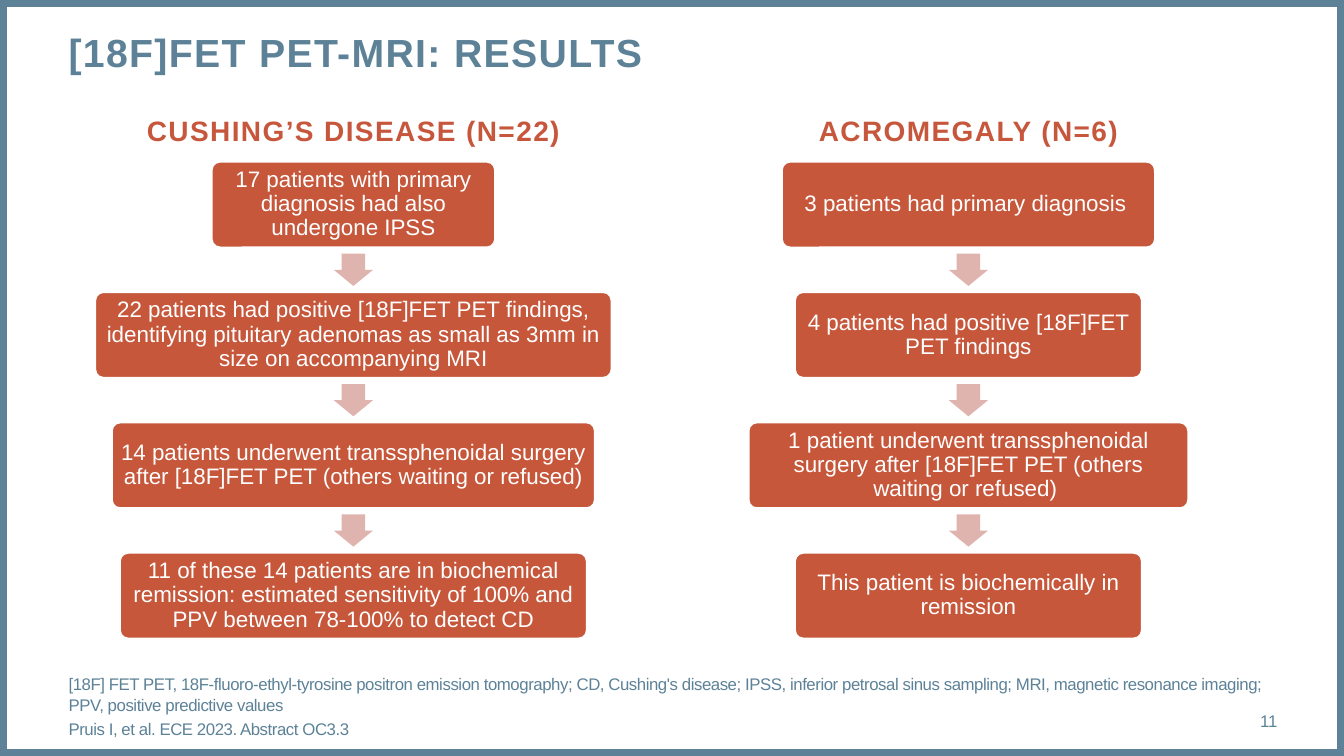
from pptx import Presentation
from pptx.dml.color import RGBColor
from pptx.enum.shapes import MSO_SHAPE
from pptx.enum.text import MSO_ANCHOR, PP_ALIGN
from pptx.util import Inches, Pt

RECTANGLE = MSO_SHAPE.RECTANGLE
ROUNDED = MSO_SHAPE.ROUNDED_RECTANGLE
DOWN_ARROW = MSO_SHAPE.DOWN_ARROW
LEFT, CENTER, RIGHT = PP_ALIGN.LEFT, PP_ALIGN.CENTER, PP_ALIGN.RIGHT
TOP, MIDDLE, BOTTOM = MSO_ANCHOR.TOP, MSO_ANCHOR.MIDDLE, MSO_ANCHOR.BOTTOM

BLUE = RGBColor(0x5D, 0x82, 0x98)
HEADING_RED = RGBColor(0xC7, 0x57, 0x3C)
STEP_RED = RGBColor(0xC6, 0x57, 0x3B)
ARROW_PINK = RGBColor(0xDF, 0xB4, 0xAF)
WHITE = RGBColor(0xFF, 0xFF, 0xFF)

PAGE_WIDTH, PAGE_HEIGHT = 13.33, 7.5
STEP_HEIGHT = 0.86
ARROW_WIDTH, ARROW_HEIGHT = 0.39, 0.32

CUSHING_STEPS = [
    (2.82, "17 patients with primary diagnosis had also undergone IPSS"),
    (5.13, "22 patients had positive [18F]FET PET findings, identifying pituitary "
           "adenomas as small as 3mm in size on accompanying MRI"),
    (4.8, "14 patients underwent transsphenoidal surgery after [18F]FET PET "
          "(others waiting or refused) "),
    (4.64, "11 of these 14 patients are in biochemical remission: estimated "
           "sensitivity of 100% and PPV between 78-100% to detect CD"),
]
ACROMEGALY_STEPS = [
    (3.71, "3 patients had primary diagnosis "),
    (3.45, "4 patients had positive [18F]FET PET findings"),
    (4.37, "1 patient underwent transsphenoidal surgery after [18F]FET PET "
           "(others waiting or refused) "),
    (3.45, "This patient is biochemically in remission"),
]
FOOTNOTES = [
    "[18F] FET PET, 18F-fluoro-ethyl-tyrosine positron emission tomography; "
    "CD, Cushing's disease; IPSS, inferior petrosal sinus sampling; "
    "MRI, magnetic resonance imaging; PPV, positive predictive values",
    "Pruis I, et al. ECE 2023. Abstract OC3.3",
]


def write_text(box, lines, size, color, bold=False, align=LEFT, anchor=TOP,
               inset=0, tracking=0, before=0, leading=1.0):
    """Fill a shape with paragraphs in one format."""
    frame = box.text_frame
    frame.word_wrap = True
    frame.vertical_anchor = anchor
    frame.margin_left = frame.margin_right = Inches(inset)
    frame.margin_top = frame.margin_bottom = Inches(inset)
    for index, line in enumerate(lines):
        para = frame.add_paragraph() if index else frame.paragraphs[0]
        para.alignment = align
        para.space_before = Pt(before)
        para.line_spacing = leading
        span = para.add_run()
        span.text = line
        span.font.name = "Arial"
        span.font.size = Pt(size)
        span.font.bold = bold
        span.font.color.rgb = color
        if tracking:
            span._r.get_or_add_rPr().set("spc", str(round(tracking * 100)))


def add_label(page, left, top, width, height, lines, **text_format):
    """Add a text box holding the given lines."""
    box = page.shapes.add_textbox(Inches(left), Inches(top), Inches(width), Inches(height))
    write_text(box, lines, **text_format)


def add_block(page, kind, left, top, width, height, fill=None, line=None, line_width=0):
    """Add a preset shape without shadow and return it."""
    block = page.shapes.add_shape(kind, Inches(left), Inches(top), Inches(width), Inches(height))
    block.shadow.inherit = False
    if fill is None:
        block.fill.background()
    else:
        block.fill.solid()
        block.fill.fore_color.rgb = fill
    if line is None:
        block.line.fill.background()
    else:
        block.line.color.rgb = line
        block.line.width = Pt(line_width)
    return block


def add_flow(page, left, top, width, height, heading, steps):
    """Place a heading over a centred column of steps joined by block arrows."""
    heading_height = 0.47
    add_label(page, left, top, width, heading_height, [heading], size=20,
              color=HEADING_RED, bold=True, align=CENTER, tracking=1)
    center = left + width / 2
    first_top = top + heading_height
    pitch = (height - heading_height - STEP_HEIGHT) / (len(steps) - 1)
    gap = pitch - STEP_HEIGHT
    for index, (step_width, text) in enumerate(steps):
        step_top = first_top + index * pitch
        step = add_block(page, ROUNDED, center - step_width / 2, step_top,
                         step_width, STEP_HEIGHT, STEP_RED, WHITE, 2)
        step.adjustments[0] = 0.1
        write_text(step, [text], size=16, color=WHITE, align=CENTER,
                   anchor=MIDDLE, inset=0.07, leading=0.9)
        if index:
            arrow = add_block(page, DOWN_ARROW, center - ARROW_WIDTH / 2,
                              step_top - (gap + ARROW_HEIGHT) / 2,
                              ARROW_WIDTH, ARROW_HEIGHT, ARROW_PINK)
            arrow.adjustments[0] = 0.6
            arrow.adjustments[1] = 0.5


def add_footer(page, left, top, width, height):
    """Place the footnotes and the page number."""
    add_label(page, left, top, width, height, FOOTNOTES, size=12, color=BLUE,
              anchor=BOTTOM, tracking=-0.3, before=3)
    number_width = 1.17
    add_label(page, left + width - number_width, top + 0.4, number_width, 0.4, ["11"],
              size=12, color=BLUE, align=RIGHT, anchor=MIDDLE)


def build_results_page(deck):
    """Build the results page with its two patient flows."""
    page = deck.slides.add_slide(deck.slide_layouts[6])
    add_block(page, RECTANGLE, 0, 0, PAGE_WIDTH, PAGE_HEIGHT, line=BLUE, line_width=10)
    add_label(page, 0.68, 0.28, 12.21, 0.63, ["[18F]FET PET-MRI: RESULTS"],
              size=28, color=BLUE, bold=True, tracking=1)
    add_flow(page, 0.54, 1.13, 5.93, 5.21, "CUSHING’S DISEASE (N=22)", CUSHING_STEPS)
    add_flow(page, 6.64, 1.13, 5.93, 5.21, "ACROMEGALY (N=6)", ACROMEGALY_STEPS)
    add_footer(page, 0.68, 6.55, 11.99, 0.78)


def main():
    """Create and save the deck."""
    deck = Presentation()
    deck.slide_width = Inches(PAGE_WIDTH)
    deck.slide_height = Inches(PAGE_HEIGHT)
    build_results_page(deck)
    deck.save("out.pptx")


if __name__ == "__main__":
    main()
